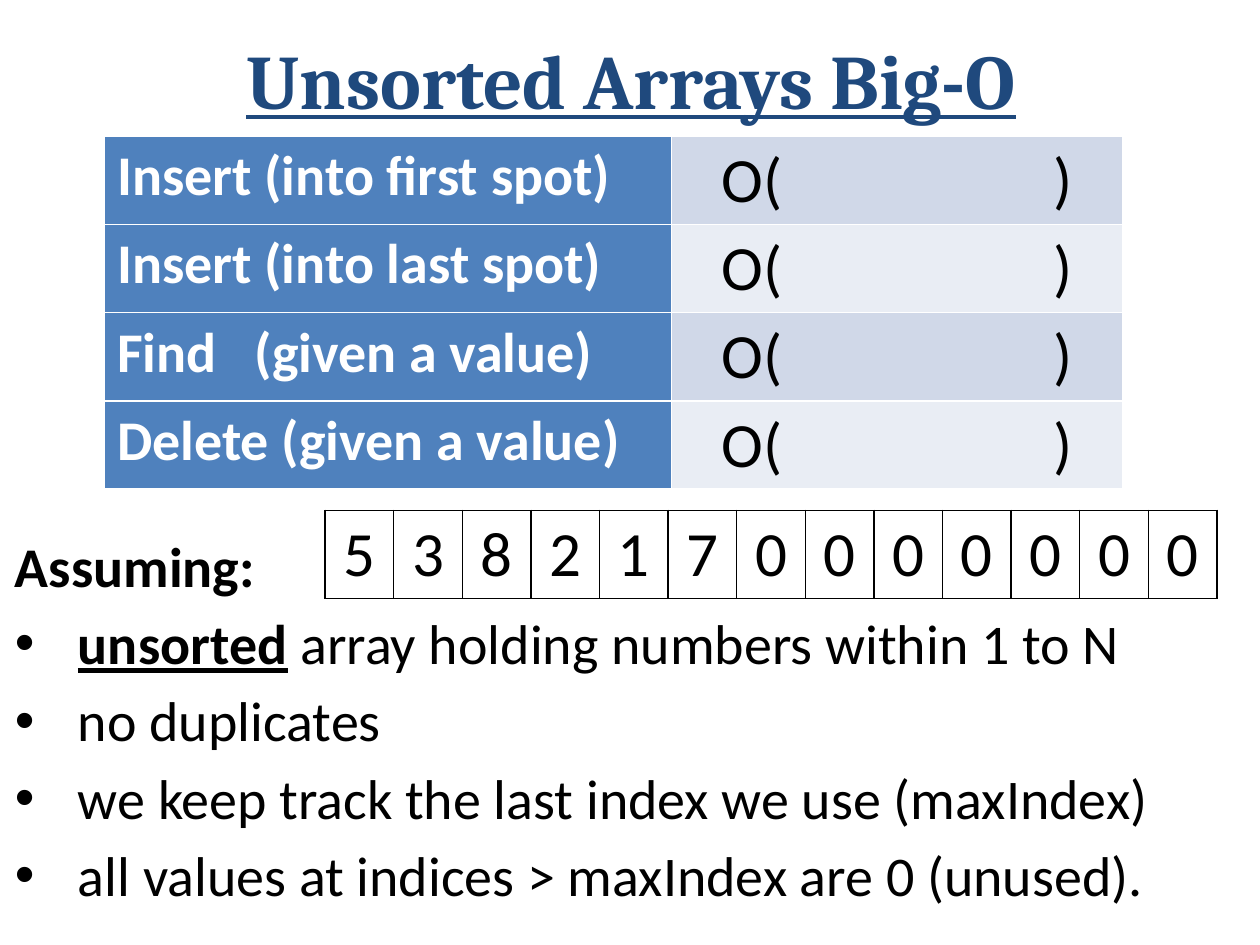
from dataclasses import dataclass

from lxml.etree import SubElement
from pptx import Presentation
from pptx.dml.color import RGBColor
from pptx.enum.text import MSO_ANCHOR, PP_ALIGN
from pptx.oxml.ns import qn
from pptx.util import Inches, Pt


@dataclass(frozen=True)
class Theme:
    heading_font: str = "Cambria"
    body_font: str = "Calibri"
    title: str = "1F497D"
    black: str = "000000"
    white: str = "FFFFFF"
    label_fill: str = "4F81BD"
    bands: tuple = ("D0D8E8", "E9EDF4")
    title_size: int = 44
    large_size: int = 36
    body_size: int = 32
    line_gap: float = 5.7


THEME = Theme()

OPERATIONS = [
    "Insert (into first spot)",
    "Insert (into last spot)",
    "Find\t(given a value)",
    "Delete (given a value)",
]
ARRAY_VALUES = [5, 3, 8, 2, 1, 7] + [0] * 7
ASSUMPTIONS = [
    [("unsorted", True), (" array holding numbers within 1 to N", False)],
    [("no duplicates", False)],
    [("we keep track the last index we use (maxIndex)", False)],
    [("all values at indices > maxIndex are 0 (unused).", False)],
]


def add_run(p, text, size, color, font=THEME.body_font, bold=False, underline=False):
    r = p.add_run()
    r.text = text
    r.font.name = font
    r.font.size = Pt(size)
    r.font.bold = bold
    r.font.underline = underline
    r.font.color.rgb = RGBColor.from_string(color)


def add_text_box(s, left, top, width, height):
    tf = s.shapes.add_textbox(*map(Inches, (left, top, width, height))).text_frame
    tf.word_wrap = True
    return tf


def set_bullet(p, indent):
    """Give the paragraph a round bullet with a hanging indent."""
    pPr = p._p.get_or_add_pPr()
    pPr.set("marL", str(Inches(indent)))
    pPr.set("indent", str(-Inches(indent)))
    SubElement(pPr, qn("a:buFont"), typeface="Arial")
    SubElement(pPr, qn("a:buChar"), char="•")


def set_tab(p, position):
    tabs = SubElement(p._p.get_or_add_pPr(), qn("a:tabLst"))
    SubElement(tabs, qn("a:tab"), pos=str(Inches(position)), algn="l")


def style_cell(cell, border, fill=None):
    """Draw all four borders, then fill the cell or leave it clear."""
    tcPr = cell._tc.get_or_add_tcPr()
    for side in ("lnL", "lnR", "lnT", "lnB"):
        ln = SubElement(tcPr, qn(f"a:{side}"), w=str(Pt(1)))
        SubElement(SubElement(ln, qn("a:solidFill")), qn("a:srgbClr"), val=border)
    if fill:
        cell.fill.solid()
        cell.fill.fore_color.rgb = RGBColor.from_string(fill)
    else:
        cell.fill.background()


def add_plain_table(s, left, top, widths, rows, row_height):
    shape = s.shapes.add_table(
        rows, len(widths), Inches(left), Inches(top),
        Inches(sum(widths)), Inches(rows * row_height))
    table = shape.table
    table.first_row = table.horz_banding = False
    for column, width in zip(table.columns, widths):
        column.width = Inches(width)
    return table


def add_title(s):
    tf = add_text_box(s, 0.02, 0, 9.98, 1.25)
    tf.vertical_anchor = MSO_ANCHOR.MIDDLE
    p = tf.paragraphs[0]
    p.alignment = PP_ALIGN.CENTER
    add_run(p, "Unsorted Arrays Big-O", THEME.title_size, THEME.title,
            THEME.heading_font, bold=True, underline=True)


def add_assumptions(s):
    tf = add_text_box(s, 0.02, 4.17, 9.98, 3.33)
    p = tf.paragraphs[0]
    p.space_before = Pt(THEME.line_gap)
    add_run(p, "Assuming:", THEME.body_size, THEME.black, bold=True)
    for runs in ASSUMPTIONS:
        p = tf.add_paragraph()
        p.space_before = Pt(THEME.line_gap)
        set_bullet(p, 0.5)
        for text, strong in runs:
            add_run(p, text, THEME.body_size, THEME.black,
                    bold=strong, underline=strong)


def add_big_o_table(s):
    """Pair each operation with an empty O( ) to be filled in."""
    table = add_plain_table(s, 0.83, 1.08, [4.5, 3.58], len(OPERATIONS), 0.7)
    for i, operation in enumerate(OPERATIONS):
        label, answer = table.cell(i, 0), table.cell(i, 1)
        style_cell(label, THEME.white, THEME.label_fill)
        p = label.text_frame.paragraphs[0]
        if "\t" in operation:
            set_tab(p, 1.09)
        add_run(p, operation, THEME.body_size, THEME.white, bold=True)

        style_cell(answer, THEME.white, THEME.bands[i % 2])
        answer.margin_left = Inches(0.4)
        p = answer.text_frame.paragraphs[0]
        set_tab(p, 2.63)
        add_run(p, "O(\t)", THEME.large_size, THEME.black)


def add_array(s):
    count = len(ARRAY_VALUES)
    table = add_plain_table(s, 2.58, 4.05, [7.08 / count] * count, 1, 0.7)
    for i, value in enumerate(ARRAY_VALUES):
        cell = table.cell(0, i)
        style_cell(cell, THEME.black)
        p = cell.text_frame.paragraphs[0]
        p.alignment = PP_ALIGN.CENTER
        add_run(p, str(value), THEME.large_size, THEME.black)


def main():
    prs = Presentation()
    prs.slide_width, prs.slide_height = Inches(10), Inches(7.5)
    s = prs.slides.add_slide(prs.slide_layouts[6])
    add_assumptions(s)
    add_title(s)
    add_big_o_table(s)
    add_array(s)
    prs.save("out.pptx")


if __name__ == "__main__":
    main()
